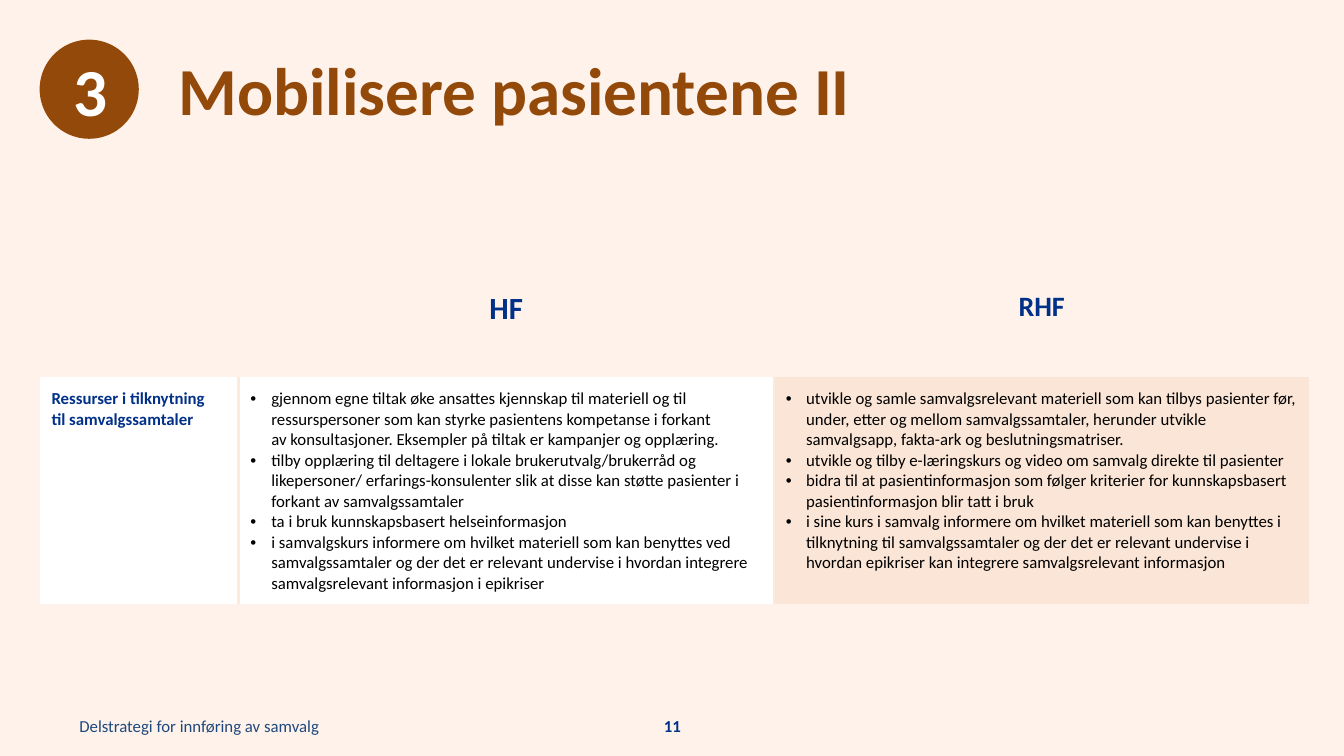
import pptx
import pptx.util
import pptx.dml.color
import pptx.enum.shapes
import pptx.enum.text
import pptx.oxml
import pptx.oxml.ns

Pt = pptx.util.Pt
RGBColor = pptx.dml.color.RGBColor
SHAPE = pptx.enum.shapes.MSO_SHAPE
ANCHOR = pptx.enum.text.MSO_ANCHOR
ALIGN = pptx.enum.text.PP_ALIGN

CREAM = RGBColor(0xFF, 0xF2, 0xEA)
PEACH = RGBColor(0xFB, 0xE5, 0xD6)
BORDER = RGBColor(0xFD, 0xEA, 0xDA)
BROWN = RGBColor(0x92, 0x49, 0x09)
NAVY = RGBColor(0x00, 0x30, 0x87)
PAGE_BLUE = RGBColor(0x00, 0x33, 0x88)
FOOTER_BLUE = RGBColor(0x1F, 0x49, 0x7D)
WHITE = RGBColor(0xFF, 0xFF, 0xFF)
BLACK = RGBColor(0x00, 0x00, 0x00)

FONT = "Calibri"
NO_STYLE = "{2D5ABB26-0587-4C30-8999-92F81FD0307C}"
CELL_INSET = 8.5

HF_ACTIONS = [
    "gjennom egne tiltak øke ansattes kjennskap til materiell og til ressurspersoner "
    "som kan styrke pasientens kompetanse i forkant \nav konsultasjoner. "
    "Eksempler på tiltak er kampanjer og opplæring.",
    "tilby opplæring til deltagere i lokale brukerutvalg/brukerråd og likepersoner/ "
    "erfarings-konsulenter slik at disse kan støtte pasienter i forkant av samvalgssamtaler",
    "ta i bruk kunnskapsbasert helseinformasjon",
    "i samvalgskurs informere om hvilket materiell som kan benyttes ved samvalgssamtaler "
    "og der det er relevant undervise i hvordan integrere samvalgsrelevant informasjon "
    "i epikriser",
]
RHF_ACTIONS = [
    "utvikle og samle samvalgsrelevant materiell som kan tilbys pasienter før, under, "
    "etter og mellom samvalgssamtaler, herunder utvikle samvalgsapp, fakta-ark og "
    "beslutningsmatriser.",
    "utvikle og tilby e-læringskurs og video om samvalg direkte til pasienter",
    "bidra til at pasientinformasjon som følger kriterier for kunnskapsbasert "
    "pasientinformasjon blir tatt i bruk",
    "i sine kurs i samvalg informere om hvilket materiell som kan benyttes i tilknytning "
    "til samvalgssamtaler og der det er relevant undervise i hvordan epikriser kan "
    "integrere samvalgsrelevant informasjon",
]


def add_bullet(para, indent):
    properties = para._p.get_or_add_pPr()
    properties.set("marL", str(Pt(indent)))
    properties.set("indent", str(-Pt(indent)))
    for tag, name, value in (("a:buFont", "typeface", "Arial"), ("a:buChar", "char", "•")):
        element = pptx.oxml.parse_xml(f"<{tag} {pptx.oxml.ns.nsdecls('a')}/>")
        element.set(name, value)
        properties.append(element)


def write_text(frame, paragraphs, size=12, color=BLACK, bold=False,
               align=ALIGN.LEFT, line_spacing=None, bullet_indent=None):
    """Fill a text frame; a newline inside a paragraph is a line break."""
    for index, text in enumerate(paragraphs):
        para = frame.paragraphs[0] if index == 0 else frame.add_paragraph()
        para.alignment = align
        if line_spacing:
            para.line_spacing = line_spacing
        if bullet_indent:
            add_bullet(para, bullet_indent)
        for number, line in enumerate(text.split("\n")):
            if number:
                para.add_line_break()
            span = para.add_run()
            span.text = line
            span.font.name = FONT
            span.font.size = Pt(size)
            span.font.bold = bold
            span.font.color.rgb = color


def set_frame(frame, insets, anchor):
    frame.word_wrap = True
    frame.vertical_anchor = anchor
    (frame.margin_left, frame.margin_top,
     frame.margin_right, frame.margin_bottom) = [Pt(inset) for inset in insets]


def add_shape(page, kind, place, fill):
    shape = page.shapes.add_shape(kind, *[Pt(length) for length in place])
    shape.shadow.inherit = False
    shape.fill.solid()
    shape.fill.fore_color.rgb = fill
    shape.line.fill.background()
    return shape


def add_text(page, text, place, insets=(0, 3.6, 7.2, 3.6), anchor=ANCHOR.MIDDLE, **style):
    box = page.shapes.add_textbox(*[Pt(length) for length in place])
    set_frame(box.text_frame, insets, anchor)
    write_text(box.text_frame, [text], **style)


def set_border(cell, side):
    line = pptx.oxml.parse_xml(
        f'<a:{side} {pptx.oxml.ns.nsdecls("a")} w="{Pt(2.25)}"><a:solidFill>'
        f'<a:srgbClr val="{BORDER}"/></a:solidFill></a:{side}>')
    cell._tc.get_or_add_tcPr().insert(0, line)


def fill_cell(cell, fill, paragraphs=(), **style):
    cell.fill.solid()
    cell.fill.fore_color.rgb = fill
    cell.margin_left = cell.margin_right = Pt(CELL_INSET)
    cell.margin_top = cell.margin_bottom = Pt(CELL_INSET)
    write_text(cell.text_frame, paragraphs, **style)


def add_action_table(page):
    widths, heights = (142, 382.5, 382.5), (70.5, 162.5)
    frame = page.shapes.add_table(2, 3, Pt(28.35), Pt(198.7), Pt(sum(widths)), Pt(sum(heights)))
    table = frame.table
    table.first_row = table.horz_banding = False
    table._tbl.tblPr.find(pptx.oxml.ns.qn("a:tableStyleId")).text = NO_STYLE
    for column, width in zip(table.columns, widths):
        column.width = Pt(width)
    for row, height in zip(table.rows, heights):
        row.height = Pt(height)

    # Header row
    heading = {"color": NAVY, "bold": True, "align": ALIGN.CENTER}
    fill_cell(table.cell(0, 0), CREAM)
    fill_cell(table.cell(0, 1), CREAM, ["HF"], size=22, **heading)
    fill_cell(table.cell(0, 2), CREAM, ["RHF"], size=20, **heading)

    # Actions row
    fill_cell(table.cell(1, 0), WHITE, ["Ressurser i tilknytning \ntil samvalgssamtaler"],
              color=NAVY, bold=True)
    fill_cell(table.cell(1, 1), WHITE, HF_ACTIONS, bullet_indent=15)
    fill_cell(table.cell(1, 2), PEACH, RHF_ACTIONS, bullet_indent=14.5)
    set_border(table.cell(1, 0), "lnR")
    set_border(table.cell(1, 1), "lnL")


def main():
    deck = pptx.Presentation()
    deck.slide_width, deck.slide_height = Pt(960), Pt(540)
    page = deck.slides.add_slide(deck.slide_layouts[6])

    # Background
    add_shape(page, SHAPE.RECTANGLE, (0, 0, 960, 540), CREAM)

    # Footer
    add_text(page, "11", (448.5, 507, 63.5, 23), insets=(7.2, 3.6, 7.2, 3.6),
             color=PAGE_BLUE, bold=True, align=ALIGN.CENTER)
    add_text(page, "Delstrategi for innføring av samvalg", (56.7, 507, 222.5, 23),
             color=FOOTER_BLUE)

    add_action_table(page)

    # Title and number badge
    add_text(page, "Mobilisere pasientene II", (127.5, 41, 778.5, 57), insets=(0, 0, 0, 0),
             anchor=ANCHOR.TOP, size=48, color=BROWN, bold=True, line_spacing=0.9)
    badge = add_shape(page, SHAPE.OVAL, (28.35, 28.35, 70.8, 70.8), BROWN)
    set_frame(badge.text_frame, (8.5, 3.6, 7.2, 3.6), ANCHOR.MIDDLE)
    write_text(badge.text_frame, ["3"], size=48, color=WHITE, bold=True, align=ALIGN.CENTER)

    deck.save("out.pptx")


if __name__ == "__main__":
    main()
